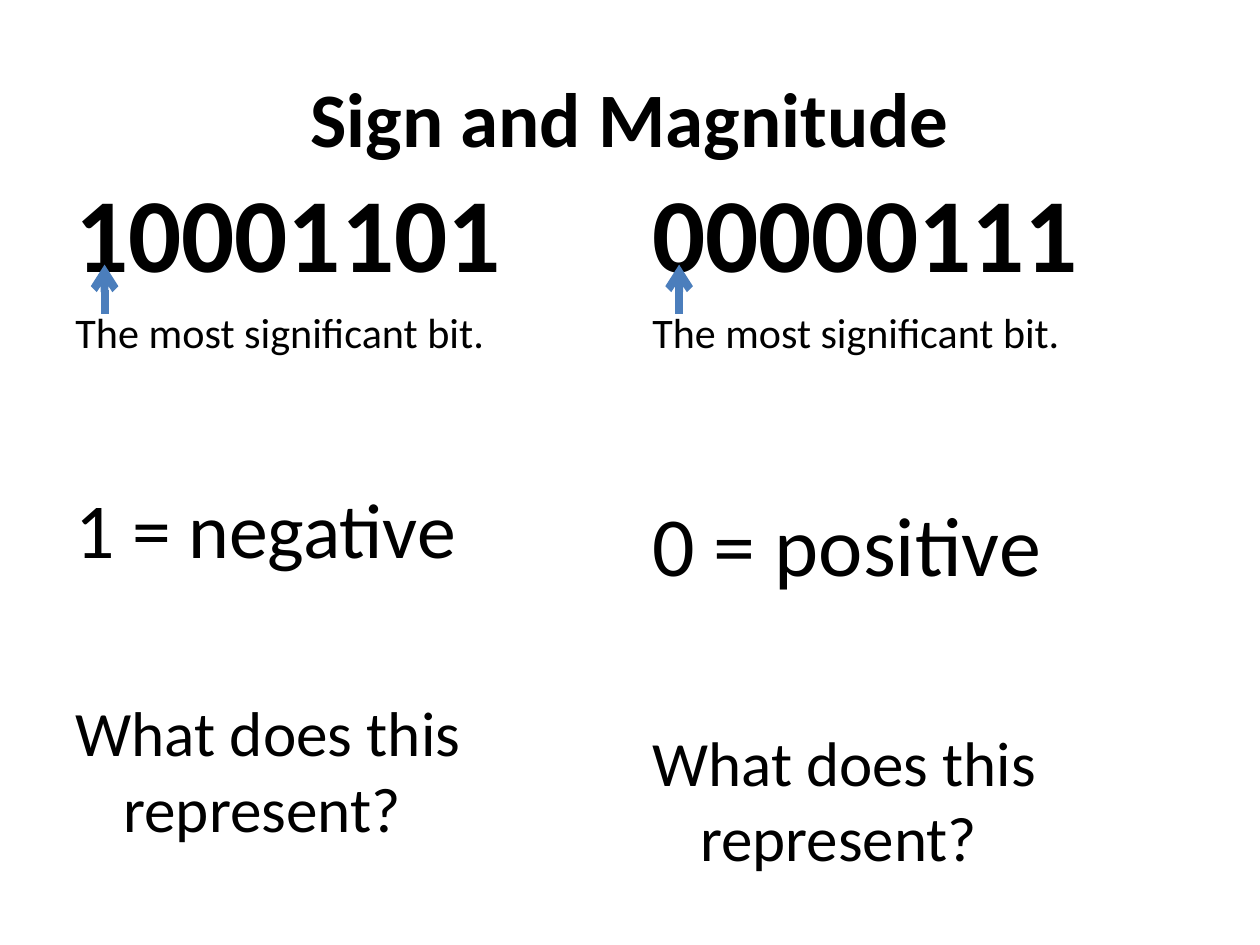
from lxml import etree
from pptx import Presentation
from pptx.dml.color import RGBColor
from pptx.enum.shapes import MSO_CONNECTOR as Connector
from pptx.enum.text import MSO_ANCHOR as Anchor, PP_ALIGN as Align
from pptx.oxml.ns import qn
from pptx.util import Inches, Pt

TITLE = "Sign and Magnitude"
COLUMNS = [
    {
        "left": 0.5,
        "arrow": 0.83,
        "bits": "10001101",
        "lines": [
            ("The most significant bit.", 24.1, 0),
            ("1 = negative", 44.4, 71),
            ("What does this represent?", 36.1, 68),
        ],
    },
    {
        "left": 5.08,
        "arrow": 5.39,
        "bits": "00000111",
        "lines": [
            ("The most significant bit.", 24, 0),
            ("0 = positive", 48, 78),
            ("What does this represent?", 36, 74),
        ],
    },
]
COLORS = {"text": "000000", "arrow": "4B7EBC", "page": "FFFFFF"}
FONT = "Calibri"
WIDTH, BITS_TOP, BITS_HEIGHT, BODY_HEIGHT = 4.42, 1.68, 0.7, 4.32
BODY_TOP = BITS_TOP + BITS_HEIGHT
ARROW_FROM, ARROW_TO = 2.49, 2.1
INDENT = Inches(0.38)


def add_span(para, text, size, bold=False):
    span = para.add_run()
    span.text = text
    span.font.name = FONT
    span.font.size = Pt(size)
    span.font.bold = bold
    span.font.color.rgb = RGBColor.from_string(COLORS["text"])


def add_box(page, left, top, height, anchor):
    box = page.shapes.add_textbox(Inches(left), Inches(top), Inches(WIDTH), Inches(height))
    frame = box.text_frame
    frame.word_wrap = True
    frame.vertical_anchor = anchor
    return frame


def add_lines(frame, lines):
    for index, (text, size, gap) in enumerate(lines):
        para = frame.add_paragraph() if index else frame.paragraphs[0]
        para.space_before = Pt(gap)
        properties = para._p.get_or_add_pPr()
        properties.set("marL", str(INDENT))
        properties.set("indent", str(-INDENT))
        add_span(para, text, size)


def add_arrow(page, x):
    arrow = page.shapes.add_connector(
        Connector.STRAIGHT, Inches(x), Inches(ARROW_FROM), Inches(x), Inches(ARROW_TO)
    )
    arrow.line.color.rgb = RGBColor.from_string(COLORS["arrow"])
    arrow.line.width = Pt(4.5)
    etree.SubElement(arrow.line._get_or_add_ln(), qn("a:tailEnd"), type="arrow")
    etree.SubElement(arrow._element.spPr, qn("a:effectLst"))


def main():
    deck = Presentation()
    deck.slide_width, deck.slide_height = Inches(10), Inches(7.5)
    page = deck.slides.add_slide(deck.slide_layouts[5])
    page.background.fill.solid()
    page.background.fill.fore_color.rgb = RGBColor.from_string(COLORS["page"])

    title = page.shapes.title
    title.left, title.top = Inches(0.5), Inches(0.3)
    title.width, title.height = Inches(9), Inches(1.25)
    title.text_frame.vertical_anchor = Anchor.MIDDLE
    heading = title.text_frame.paragraphs[0]
    heading.alignment = Align.CENTER
    add_span(heading, TITLE, 44, bold=True)

    for column in COLUMNS:
        bits = add_box(page, column["left"], BITS_TOP, BITS_HEIGHT, Anchor.BOTTOM)
        add_span(bits.paragraphs[0], column["bits"], 60, bold=True)
        body = add_box(page, column["left"], BODY_TOP, BODY_HEIGHT, Anchor.TOP)
        add_lines(body, column["lines"])

    for column in COLUMNS:
        add_arrow(page, column["arrow"])
    deck.save("out.pptx")


if __name__ == "__main__":
    main()
